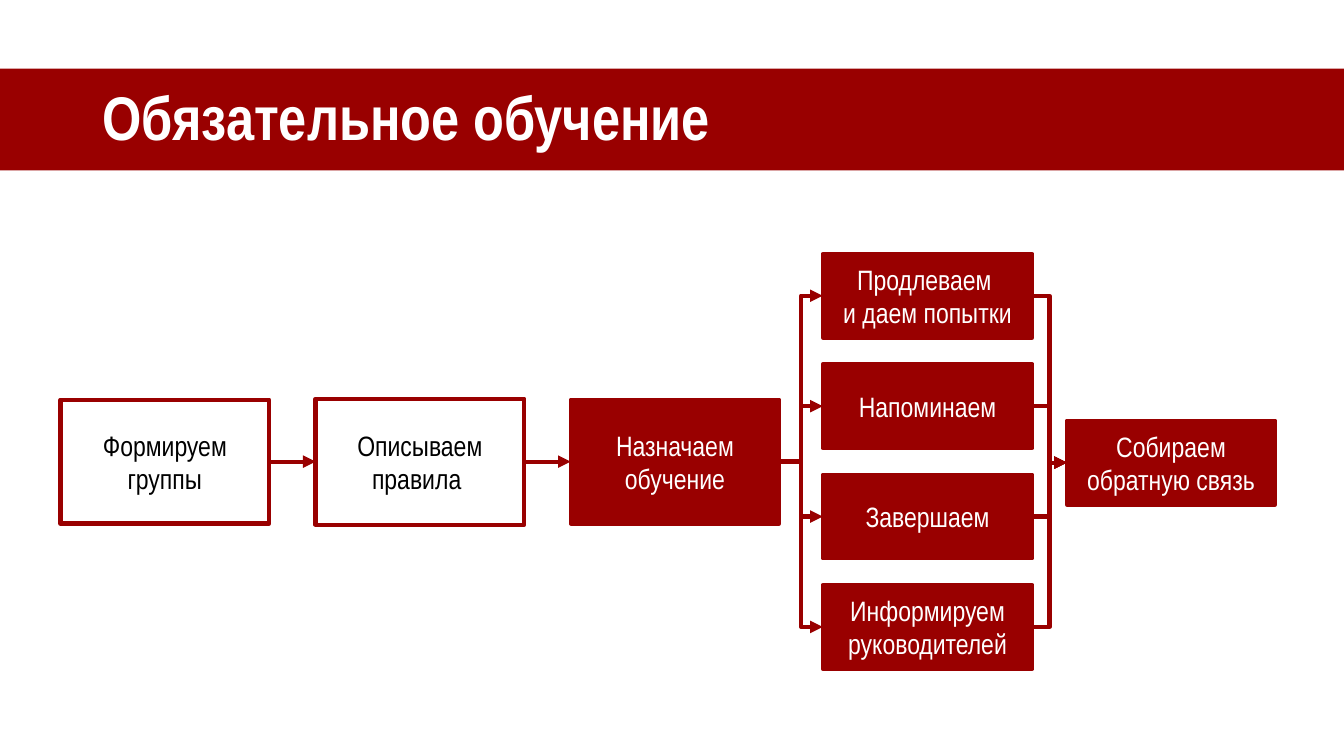
from lxml import etree
from pptx import Presentation
from pptx.dml.color import RGBColor
from pptx.enum.shapes import MSO_CONNECTOR as LINK, MSO_SHAPE as SHAPE
from pptx.enum.text import MSO_ANCHOR as ANCHOR, PP_ALIGN as ALIGN
from pptx.oxml.ns import qn
from pptx.util import Inches, Pt

COLORS = {"red": "990000", "white": "FFFFFF", "black": "000000"}
FONT = "Arial Narrow"
LEFT, RIGHT = 1, 3


def color(name):
    return RGBColor.from_string(COLORS[name])


def style(par, size, ink, bold=False):
    par.font.name = FONT
    par.font.size = Pt(size)
    par.font.bold = bold
    par.font.color.rgb = color(ink)


def add_rect(slide, x, y, w, h, fill):
    rect = slide.shapes.add_shape(
        SHAPE.RECTANGLE, Inches(x), Inches(y), Inches(w), Inches(h))
    rect.shadow.inherit = False
    rect.fill.solid()
    rect.fill.fore_color.rgb = color(fill)
    return rect


def add_header(slide, x, y, w, h, text):
    band = add_rect(slide, x, y, w, h, "red")
    band.line.fill.background()
    box = slide.shapes.add_textbox(
        Inches(x + 0.92), Inches(y - 0.21), Inches(11.5), Inches(1.45))
    frame = box.text_frame
    frame.word_wrap = True
    frame.vertical_anchor = ANCHOR.MIDDLE
    title = frame.paragraphs[0]
    title.text = text
    title.line_spacing = 0.9
    style(title, 44, "white", True)


def add_step(slide, x, y, w, h, text, fill="red", ink="white"):
    step = add_rect(slide, x, y, w, h, fill)
    step.line.color.rgb = color("red")
    step.line.width = Pt(3)
    frame = step.text_frame
    frame.word_wrap = True
    frame.vertical_anchor = ANCHOR.MIDDLE
    frame.text = text
    for par in frame.paragraphs:
        par.alignment = ALIGN.CENTER
        style(par, 20, ink)
    return step


def add_arrow(slide, start, end, kind=LINK.ELBOW):
    """Join the right side of start to the left side of end."""
    arrow = slide.shapes.add_connector(kind, 0, 0, 0, 0)
    arrow.begin_connect(start, RIGHT)
    arrow.end_connect(end, LEFT)
    arrow.line.color.rgb = color("red")
    arrow.line.width = Pt(3)
    line = arrow.line._get_or_add_ln()
    etree.SubElement(line, qn("a:tailEnd"), type="triangle")
    etree.SubElement(arrow._element.spPr, qn("a:effectLst"))


def add_flow(slide, x, y):
    """Three steps in a row, four parallel ones, then the last step."""
    wide, tall, low = 2.07, 1.23, 0.83
    mid = y + 2.06
    top = mid - tall / 2
    groups = add_step(slide, x, top, wide, tall, "Формируем группы",
                      "white", "black")
    rules = add_step(slide, x + 2.53, top - 0.01, wide, tall + 0.02,
                     "Описываем правила ", "white", "black")
    assign = add_step(slide, x + 5.06, top, wide, tall, "Назначаем обучение")
    tasks = ["Продлеваем \nи даем попытки", "Напоминаем", "Завершаем",
             "Информируем руководителей"]
    branch = [add_step(slide, x + 7.56, y + 1.095 * row, 2.08, low, text)
              for row, text in enumerate(tasks)]
    collect = add_step(slide, x + 9.98, mid + 0.01 - low / 2, wide, low,
                       "Собираем обратную связь")

    add_arrow(slide, groups, rules, LINK.STRAIGHT)
    add_arrow(slide, rules, assign, LINK.STRAIGHT)
    for task in branch:
        add_arrow(slide, assign, task)
        add_arrow(slide, task, collect)


def main():
    deck = Presentation()
    deck.slide_width = Inches(13.33)
    deck.slide_height = Inches(7.5)
    slide = deck.slides.add_slide(deck.slide_layouts[6])
    add_header(slide, 0, 0.68, 13.33, 1.01, "Обязательное обучение")
    add_flow(slide, 0.6, 2.52)
    deck.save("out.pptx")


if __name__ == "__main__":
    main()
